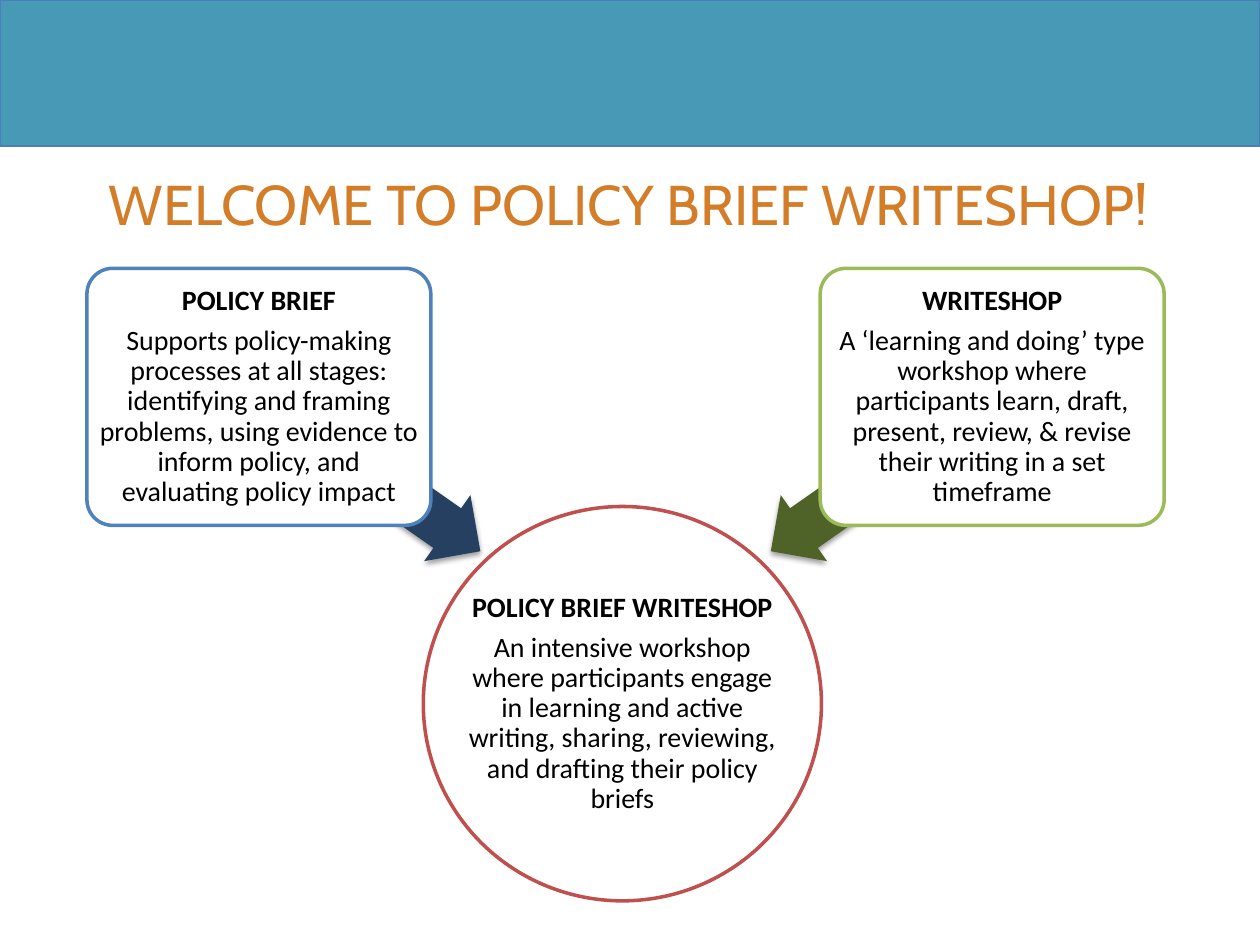
from dataclasses import dataclass

from lxml import etree
from pptx import Presentation
from pptx.dml.color import RGBColor
from pptx.enum.shapes import MSO_SHAPE
from pptx.enum.text import MSO_ANCHOR, MSO_AUTO_SIZE, PP_ALIGN
from pptx.oxml.ns import qn
from pptx.util import Inches, Pt

RECTANGLE = MSO_SHAPE.RECTANGLE
ROUNDED = MSO_SHAPE.ROUNDED_RECTANGLE
OVAL = MSO_SHAPE.OVAL
LEFT_ARROW = MSO_SHAPE.LEFT_ARROW
CENTER = PP_ALIGN.CENTER
MIDDLE = MSO_ANCHOR.MIDDLE
NO_AUTOFIT = MSO_AUTO_SIZE.NONE

WHITE = RGBColor(0xFF, 0xFF, 0xFF)
BLACK = RGBColor(0, 0, 0)
TEAL = RGBColor(0x47, 0x99, 0xB5)
BAND_EDGE = RGBColor(0x4B, 0x7E, 0xBC)
ORANGE = RGBColor(0xD3, 0x7D, 0x28)
RED = RGBColor(0xC0, 0x50, 0x4D)
BLUE = RGBColor(0x4F, 0x81, 0xBD)
GREEN = RGBColor(0x9B, 0xBB, 0x59)
NAVY = RGBColor(0x25, 0x40, 0x61)
OLIVE = RGBColor(0x4F, 0x62, 0x28)

# The slide is a grid of 100 columns by 75 rows of square cells.
COLUMNS, ROWS = 100, 75
CELL = Inches(0.1)


@dataclass(frozen=True)
class Area:
    """A rectangle in grid columns and rows."""
    column: float
    row: float
    columns: float
    rows: float

    def lengths(self) -> list[int]:
        return [round(CELL * size) for size in
                (self.column, self.row, self.columns, self.rows)]


@dataclass(frozen=True)
class Card:
    area: Area
    kind: int
    edge: RGBColor
    margin: float  # inches, added to the inset of the preset shape
    heading: str
    body: str


@dataclass(frozen=True)
class Arrow:
    column: float
    angle: float
    color: RGBColor


TITLE_AREA = Area(4.9, 12.6, 90, 6.5)
CIRCLE = Card(Area(33.6, 40.2, 31.6, 31.3), OVAL, RED, -0.12,
              "POLICY BRIEF WRITESHOP",
              "An intensive workshop where participants engage in learning and "
              "active writing, sharing, reviewing, and drafting their policy briefs")
BRIEF = Card(Area(6.9, 21.3, 27.3, 20.4), ROUNDED, BLUE, 0.02,
             "POLICY BRIEF",
             "Supports policy-making processes at all stages: identifying and "
             "framing problems, using evidence to inform policy, and evaluating "
             "policy impact")
WRITESHOP = Card(Area(65.1, 21.3, 27.3, 20.4), ROUNDED, GREEN, 0.02,
                 "WRITESHOP",
                 "A ‘learning and doing’ type workshop where participants learn, "
                 "draft, present, review, & revise their writing in a set timeframe")
BRIEF_ARROW = Arrow(20.2, 215, NAVY)
WRITESHOP_ARROW = Arrow(59.4, 325, OLIVE)


def add_filled(page, kind: int, area: Area, fill: RGBColor):
    shape = page.shapes.add_shape(kind, *area.lengths())
    shape.shadow.inherit = False
    shape.fill.solid()
    shape.fill.fore_color.rgb = fill
    return shape


def set_edge(shape, color: RGBColor, width: float) -> None:
    shape.line.color.rgb = color
    shape.line.width = Pt(width)


def write(para, text: str, *, size: float, font: str, color: RGBColor,
          bold: bool = False) -> None:
    para.alignment = CENTER
    span = para.add_run()
    span.text = text
    span.font.size = Pt(size)
    span.font.name = font
    span.font.bold = bold
    span.font.color.rgb = color


def set_frame(frame, left: float, top: float, right: float, bottom: float) -> None:
    """Centre the text vertically and set its margins in inches."""
    frame.word_wrap = True
    frame.auto_size = NO_AUTOFIT
    frame.vertical_anchor = MIDDLE
    frame.margin_left, frame.margin_top = Inches(left), Inches(top)
    frame.margin_right, frame.margin_bottom = Inches(right), Inches(bottom)


def add_card(page, card: Card) -> None:
    box = add_filled(page, card.kind, card.area, WHITE)
    set_edge(box, card.edge, 2)
    if card.kind == ROUNDED:
        box.adjustments[0] = 0.1
    frame = box.text_frame
    set_frame(frame, *[card.margin] * 4)
    heading, body = frame.paragraphs[0], frame.add_paragraph()
    for para, text in ((heading, card.heading), (body, card.body)):
        para.line_spacing = 0.9
        para.space_after = Pt(5.6)
        write(para, text, size=16, font="Calibri", color=BLACK, bold=para is heading)


def add_soft_shadow(shape) -> None:
    effects = shape._element.spPr.find(qn("a:effectLst"))
    shadow = etree.SubElement(effects, qn("a:outerShdw"), blurRad=str(Pt(3.1)),
                              dist=str(Pt(1.6)), dir="5400000", rotWithShape="0")
    color = etree.SubElement(shadow, qn("a:srgbClr"), val=str(BLACK))
    etree.SubElement(color, qn("a:alpha"), val="38000")


def add_arrow(page, arrow: Arrow) -> None:
    shape = add_filled(page, LEFT_ARROW, Area(arrow.column, 34.9, 19.7, 6.4), arrow.color)
    shape.line.fill.background()
    shape.adjustments[0], shape.adjustments[1] = 0.6, 0.5
    shape.rotation = arrow.angle
    add_soft_shadow(shape)


def add_title(page, text: str) -> None:
    title = page.shapes.title
    title.left, title.top, title.width, title.height = TITLE_AREA.lengths()
    set_frame(title.text_frame, 0.1, 0.05, 0.1, 0)
    write(title.text_frame.paragraphs[0], text, size=32, font="Cabin", color=ORANGE)


def main() -> None:
    deck = Presentation()
    deck.slide_width, deck.slide_height = CELL * COLUMNS, CELL * ROWS
    page = deck.slides.add_slide(deck.slide_layouts.get_by_name("Title Only"))
    band = add_filled(page, RECTANGLE, Area(0, 0, COLUMNS, 11.6), TEAL)
    set_edge(band, BAND_EDGE, 0.75)
    add_title(page, "WELCOME TO POLICY BRIEF WRITESHOP!")
    add_card(page, CIRCLE)
    for arrow, card in ((BRIEF_ARROW, BRIEF), (WRITESHOP_ARROW, WRITESHOP)):
        add_arrow(page, arrow)
        add_card(page, card)
    deck.save("out.pptx")


if __name__ == "__main__":
    main()
